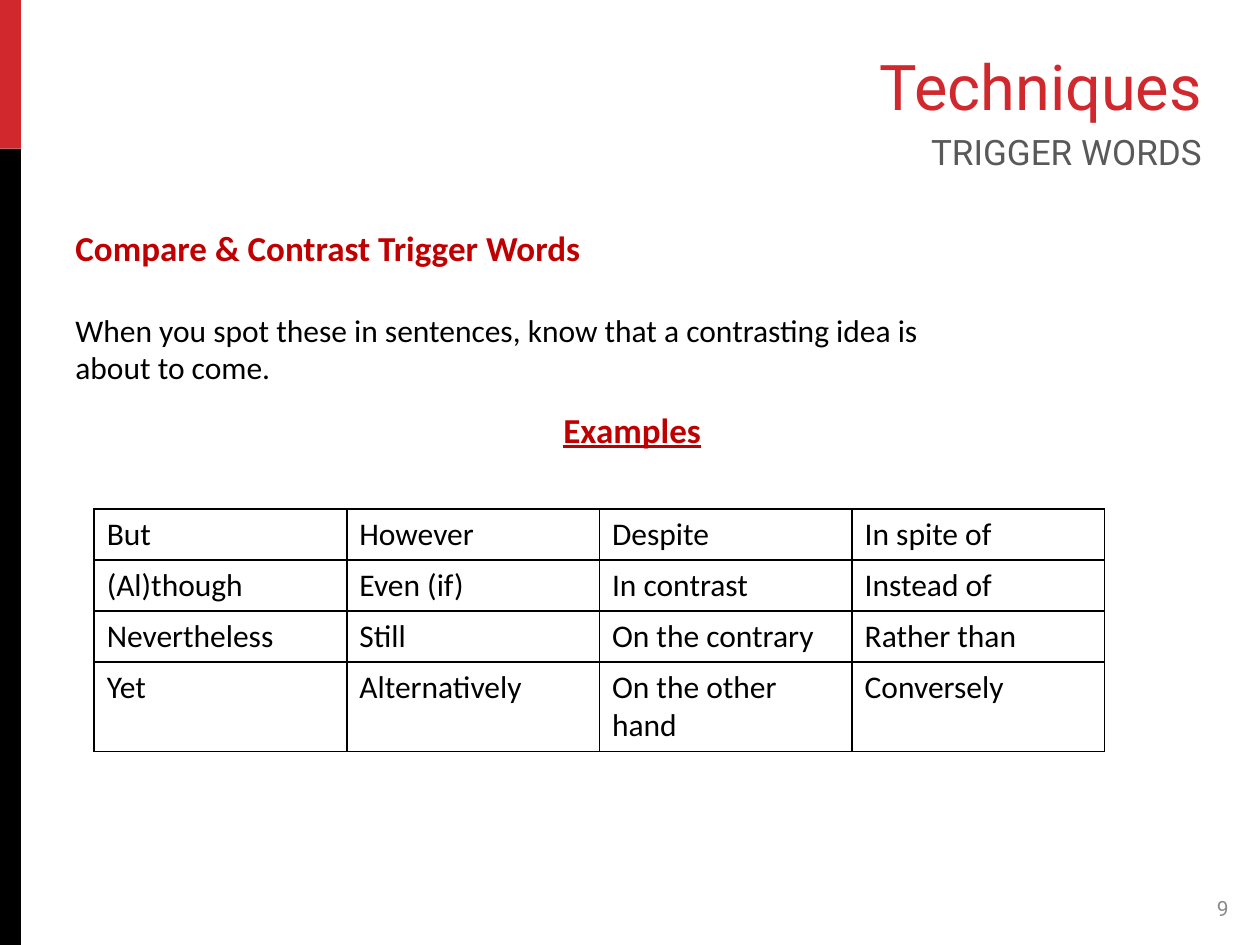
from lxml.etree import SubElement
from pptx import Presentation
from pptx.dml.color import RGBColor
from pptx.enum.shapes import MSO_SHAPE as Shape
from pptx.enum.text import MSO_ANCHOR as Anchor, MSO_AUTO_SIZE as AutoSize, PP_ALIGN as Align
from pptx.oxml.ns import qn
from pptx.util import Pt

RED, DARK_RED, BLACK, WHITE = "D1282E", "C00000", "000000", "FFFFFF"

TITLE = {"name": "Roboto", "size": Pt(36), "bold": False}
SUBTITLE = {"name": "Roboto", "size": Pt(20)}
NUMBER = {"name": "Roboto", "size": Pt(12)}
HEADING = {"name": "Calibri", "size": Pt(20), "bold": True}
EXAMPLES = {**HEADING, "underline": True}
PLAIN = {"name": "Calibri", "size": Pt(18), "bold": False}

TRIGGER_WORDS = [
    ["But", "However", "Despite", "In spite of"],
    ["(Al)though", "Even (if)", "In contrast", "Instead of"],
    ["Nevertheless", "Still", "On the contrary", "Rather than"],
    ["Yet", "Alternatively", "On the other hand", "Conversely"],
]


def rgb(hex_color):
    return RGBColor.from_string(hex_color)


def place(shape, box):
    for side, length in zip(("left", "top", "width", "height"), box):
        setattr(shape, side, Pt(length))


def write(para, text, style, color, align=Align.LEFT, before=0):
    para.text = text
    para.alignment = align
    para.space_before = Pt(before)
    for name, value in style.items():
        setattr(para.font, name, value)
    para.font.color.rgb = rgb(color)


def prepare_frame(shape, anchor=Anchor.TOP):
    frame = shape.text_frame
    frame.word_wrap = True
    frame.auto_size = AutoSize.NONE
    frame.vertical_anchor = anchor
    return frame


def add_text(page, box, anchor=Anchor.TOP):
    return prepare_frame(page.shapes.add_textbox(*map(Pt, box)), anchor)


def add_side_bar(page, box, red_height):
    left, top, width, height = box
    parts = [(top, red_height, RED), (top + red_height, height - red_height, BLACK)]
    for part_top, part_height, color in parts:
        bar = page.shapes.add_shape(
            Shape.RECTANGLE, Pt(left), Pt(part_top), Pt(width), Pt(part_height))
        bar.shadow.inherit = False
        bar.fill.solid()
        bar.fill.fore_color.rgb = rgb(color)
        bar.line.fill.background()


def fill_header(page, box):
    left, top, width, height = box
    title, subtitle = page.shapes.title, page.placeholders[1]

    place(title, (left, top, width, 67))
    frame = prepare_frame(title, Anchor.BOTTOM)
    write(frame.paragraphs[0], "Techniques", TITLE, RED, Align.RIGHT)

    place(subtitle, (left, top + 64, width, height - 64))
    para = prepare_frame(subtitle).paragraphs[0]
    props = para._p.get_or_add_pPr()
    props.set("marL", "0")
    props.set("indent", "0")
    SubElement(props, qn("a:buNone"))
    write(para, "TRIGGER WORDS", SUBTITLE, "595959", Align.RIGHT)


def add_explanation(page, box):
    frame = add_text(page, box)
    write(frame.paragraphs[0], "Compare & Contrast Trigger Words", HEADING, DARK_RED)
    write(frame.add_paragraph(),
          "When you spot these in sentences, know that a contrasting idea is\vabout to come.",
          PLAIN, BLACK, before=24)


def add_examples_heading(page, box):
    frame = add_text(page, box)
    write(frame.paragraphs[0], "Examples", EXAMPLES, DARK_RED, Align.CENTER)


def add_borders(cell):
    props = cell._tc.get_or_add_tcPr()
    for edge in ("lnL", "lnR", "lnT", "lnB"):
        line = SubElement(props, qn(f"a:{edge}"), w=str(Pt(1)))
        fill = SubElement(line, qn("a:solidFill"))
        SubElement(fill, qn("a:srgbClr"), val=BLACK)


def add_word_table(page, box, row_height):
    rows, columns = len(TRIGGER_WORDS), len(TRIGGER_WORDS[0])
    table = page.shapes.add_table(rows, columns, *map(Pt, box)).table
    table.first_row = table.horz_banding = False
    for row in table.rows:
        row.height = Pt(row_height)
    # The last row holds a wrapped entry and takes the remaining height
    table.rows[rows - 1].height = Pt(box[3] - row_height * (rows - 1))
    for row, words in enumerate(TRIGGER_WORDS):
        for column, word in enumerate(words):
            cell = table.cell(row, column)
            add_borders(cell)
            cell.fill.solid()
            cell.fill.fore_color.rgb = rgb(WHITE)
            write(cell.text_frame.paragraphs[0], word, PLAIN, BLACK)


def add_page_number(page, box):
    frame = add_text(page, box, Anchor.MIDDLE)
    write(frame.paragraphs[0], "9", NUMBER, "8C8C8C", Align.RIGHT)


def main():
    deck = Presentation()
    deck.slide_width, deck.slide_height = Pt(720), Pt(540)
    page = deck.slides.add_slide(deck.slide_layouts[1])

    add_side_bar(page, (0, 0, 12, 540), red_height=85)
    fill_header(page, (127.5, 7.2, 566.5, 98))
    add_explanation(page, (36, 126, 654.5, 127.5))
    add_examples_heading(page, (40.3, 229.7, 642, 46))
    add_word_table(page, (53.8, 290.8, 577.5, 138), row_height=29.2)
    add_page_number(page, (643.7, 504.7, 65.5, 28))

    deck.save("out.pptx")


if __name__ == "__main__":
    main()
